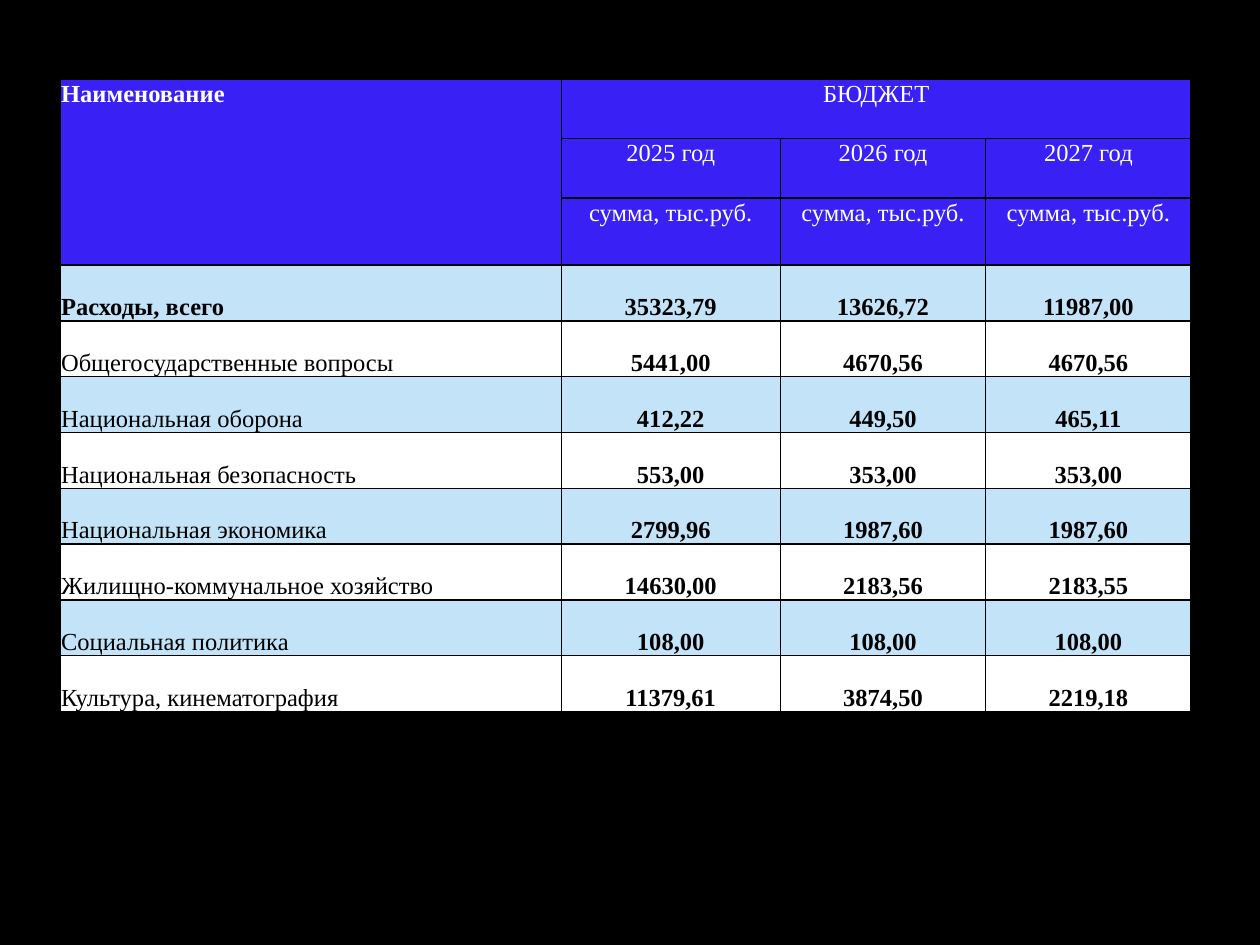
from lxml import etree
from pptx import Presentation
from pptx import util as u
from pptx.dml.color import RGBColor
from pptx.enum import text
from pptx.oxml import ns

COLORS = {"black": "000000", "white": "FFFFFF", "header": "3920F4", "band": "C3E3F9"}
COLUMNS = [286.5, 125.2, 117.4, 117.4]
HEADER_HEIGHTS = [34, 34, 38.2]
BODY_HEIGHT = 31.9
HEADER = [
    ["Наименование", "БЮДЖЕТ", "", ""],
    ["", "2025 год", "2026 год", "2027 год"],
    [""] + ["сумма, тыс.руб."] * 3,
]
EXPENSES = [
    ["Расходы, всего", "35323,79", "13626,72", "11987,00"],
    ["Общегосударственные вопросы", "5441,00", "4670,56", "4670,56"],
    ["Национальная оборона", "412,22", "449,50", "465,11"],
    ["Национальная безопасность", "553,00", "353,00", "353,00"],
    ["Национальная экономика", "2799,96", "1987,60", "1987,60"],
    ["Жилищно-коммунальное хозяйство", "14630,00", "2183,56", "2183,55"],
    ["Социальная политика", "108,00", "108,00", "108,00"],
    ["Культура, кинематография", "11379,61", "3874,50", "2219,18"],
]


class BudgetSlide:
    font = "Times New Roman"
    size = u.Pt(14)

    def __init__(self, prs):
        self.slide = prs.slides.add_slide(prs.slide_layouts[6])
        fill = self.slide.background.fill
        fill.solid()
        fill.fore_color.rgb = self.color("black")

    def color(self, name):
        return RGBColor.from_string(COLORS[name])

    def table(self, left, top, columns, heights, rows):
        frame = self.slide.shapes.add_table(
            len(rows), len(columns), u.Pt(left), u.Pt(top),
            u.Pt(sum(columns)), u.Pt(sum(heights)))
        table = frame.table
        for column, width in zip(table.columns, columns):
            column.width = u.Pt(width)
        for row, height in zip(table.rows, heights):
            row.height = u.Pt(height)
        return table

    def cell(self, cell, words, fill, color, bold, centered, bottom):
        self.borders(cell)
        cell.fill.solid()
        cell.fill.fore_color.rgb = self.color(fill)
        cell.margin_left = cell.margin_right = cell.margin_top = u.Pt(0.7)
        cell.margin_bottom = 0
        anchors = text.MSO_ANCHOR
        cell.vertical_anchor = anchors.BOTTOM if bottom else anchors.TOP
        p = cell.text_frame.paragraphs[0]
        if words:
            p.add_run().text = words
        p.alignment = text.PP_ALIGN.CENTER if centered else text.PP_ALIGN.LEFT
        p.font.name, p.font.size, p.font.bold = self.font, self.size, bold
        p.font.color.rgb = self.color(color)

    def borders(self, cell):
        props = cell._tc.get_or_add_tcPr()
        for side in ("a:lnL", "a:lnR", "a:lnT", "a:lnB"):
            line = etree.SubElement(props, ns.qn(side), w=str(u.Pt(1)))
            fill = etree.SubElement(line, ns.qn("a:solidFill"))
            etree.SubElement(fill, ns.qn("a:srgbClr"), val=COLORS["black"])


def main():
    prs = Presentation()
    prs.slide_width, prs.slide_height = u.Pt(720), u.Pt(540)
    budget = BudgetSlide(prs)
    rows = HEADER + EXPENSES
    heights = HEADER_HEIGHTS + [BODY_HEIGHT] * len(EXPENSES)
    table = budget.table(34.2, 45.3, COLUMNS, heights, rows)

    total_row = len(HEADER)
    for i, row in enumerate(rows):
        body = i >= total_row
        if body:
            fill = "white" if (i - total_row) % 2 else "band"
        else:
            fill = "header"
        for j, words in enumerate(row):
            bold = (j > 0 or i == total_row) if body else j == 0
            budget.cell(table.cell(i, j), words, fill, "black" if body else "white",
                        bold, centered=j > 0, bottom=body)
    table.cell(0, 0).merge(table.cell(2, 0))
    table.cell(0, 1).merge(table.cell(0, 3))
    prs.save("out.pptx")


if __name__ == "__main__":
    main()
